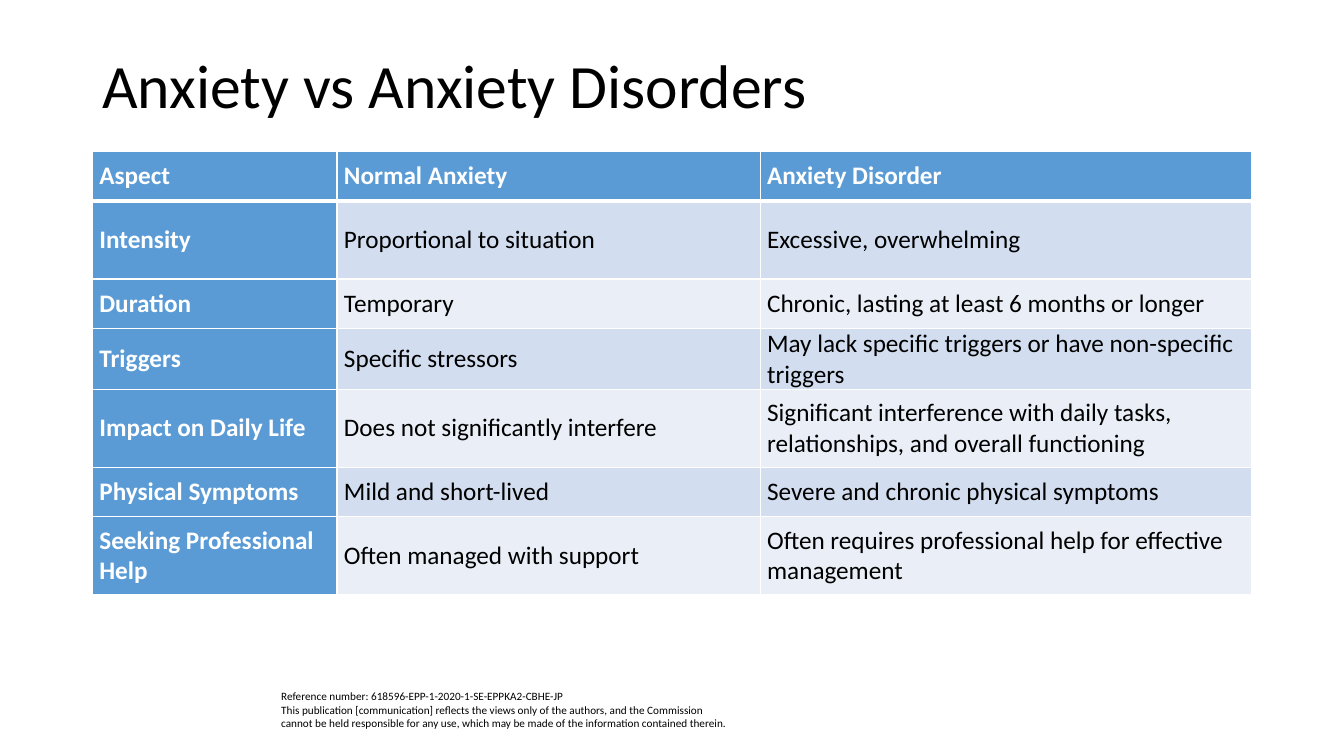
from dataclasses import dataclass

from lxml.etree import SubElement
from pptx import Presentation
from pptx.dml.color import RGBColor
from pptx.enum.text import MSO_ANCHOR
from pptx.oxml.ns import qn
from pptx.slide import Slide
from pptx.table import _Cell
from pptx.util import Pt

COLORS = {
    "text": "000000",
    "white": "FFFFFF",
    "header": "5B9BD5",
    "band_dark": "D2DEEF",
    "band_light": "EAEFF7",
}
FONT = "Calibri"
LEFT, WIDTH = 66, 828
COLUMN_WIDTHS = (174.75, 302.25, 351)
SHORT_ROW, TALL_ROW = 35.5, 55.75
THIN, THICK = 1, 3


@dataclass
class Row:
    aspect: str
    normal: str
    disorder: str
    height: float = SHORT_ROW


ROWS = [
    Row("Aspect", "Normal Anxiety", "Anxiety Disorder"),
    Row("Intensity", "Proportional to situation", "Excessive, overwhelming", TALL_ROW),
    Row("Duration", "Temporary", "Chronic, lasting at least 6 months or longer"),
    Row("Triggers", "Specific stressors",
        "May lack specific triggers or have non-specific triggers"),
    Row("Impact on Daily Life", "Does not significantly interfere",
        "Significant interference with daily tasks, relationships, and overall functioning",
        TALL_ROW),
    Row("Physical Symptoms", "Mild and short-lived",
        "Severe and chronic physical symptoms"),
    Row("Seeking Professional Help", "Often managed with support",
        "Often requires professional help for effective management", TALL_ROW),
]
REFERENCE = (
    "Reference number: 618596-EPP-1-2020-1-SE-EPPKA2-CBHE-JP\v"
    "This publication [communication] reflects the views only of the authors, "
    "and the Commission cannot be held responsible for any use, "
    "which may be made of the information contained therein."
)


def write_text(tf, text: str, *, size: float, color: str = "text",
               bold: bool = False, spacing: float = 1.0) -> None:
    """Fill the first paragraph; a vertical tab in the text breaks the line."""
    tf.word_wrap = True
    p = tf.paragraphs[0]
    p.text = text
    p.line_spacing = spacing
    for r in p.runs:
        r.font.name = FONT
        r.font.size = Pt(size)
        r.font.bold = bold
        r.font.color.rgb = RGBColor.from_string(COLORS[color])


def add_text(s: Slide, text: str, left: float, top: float, width: float,
             height: float, anchor: MSO_ANCHOR = MSO_ANCHOR.TOP, **text_format) -> None:
    sp = s.shapes.add_textbox(Pt(left), Pt(top), Pt(width), Pt(height))
    sp.text_frame.vertical_anchor = anchor
    write_text(sp.text_frame, text, **text_format)


def set_borders(cell: _Cell, top: float, bottom: float) -> None:
    tc_pr = cell._tc.get_or_add_tcPr()
    for side, width in (("L", THIN), ("R", THIN), ("T", top), ("B", bottom)):
        ln = SubElement(tc_pr, qn(f"a:ln{side}"), w=str(Pt(width)))
        fill = SubElement(ln, qn("a:solidFill"))
        SubElement(fill, qn("a:srgbClr"), val=COLORS["white"])


def format_cell(cell: _Cell, text: str, row: int, column: int) -> None:
    is_header = row == 0 or column == 0
    band = "band_dark" if row % 2 else "band_light"
    cell.vertical_anchor = MSO_ANCHOR.MIDDLE
    cell.margin_left = cell.margin_right = Pt(5)
    cell.margin_top = cell.margin_bottom = Pt(0)
    set_borders(cell, top=THICK if row == 1 else THIN,
                bottom=THICK if row == 0 else THIN)
    cell.fill.solid()
    cell.fill.fore_color.rgb = RGBColor.from_string(
        COLORS["header" if is_header else band])
    write_text(cell.text_frame, text, size=18, bold=is_header,
               color="white" if is_header else "text")


def add_comparison(s: Slide) -> None:
    height = sum(row.height for row in ROWS)
    table = s.shapes.add_table(len(ROWS), len(COLUMN_WIDTHS), Pt(LEFT), Pt(108),
                               Pt(WIDTH), Pt(height)).table
    table.first_col = True
    for column, width in enumerate(COLUMN_WIDTHS):
        table.columns[column].width = Pt(width)
    for i, row in enumerate(ROWS):
        table.rows[i].height = Pt(row.height)
        for j, text in enumerate((row.aspect, row.normal, row.disorder)):
            format_cell(table.cell(i, j), text, i, j)


def main() -> None:
    prs = Presentation()
    prs.slide_width, prs.slide_height = Pt(960), Pt(540)
    s = prs.slides.add_slide(prs.slide_layouts[6])
    add_text(s, REFERENCE, 193.75, 489, 334, 36, size=8)
    add_text(s, "Anxiety vs Anxiety Disorders", LEFT, 28.75, WIDTH, 69,
             anchor=MSO_ANCHOR.MIDDLE, size=44, spacing=0.9)
    add_comparison(s)
    prs.save("out.pptx")


if __name__ == "__main__":
    main()
